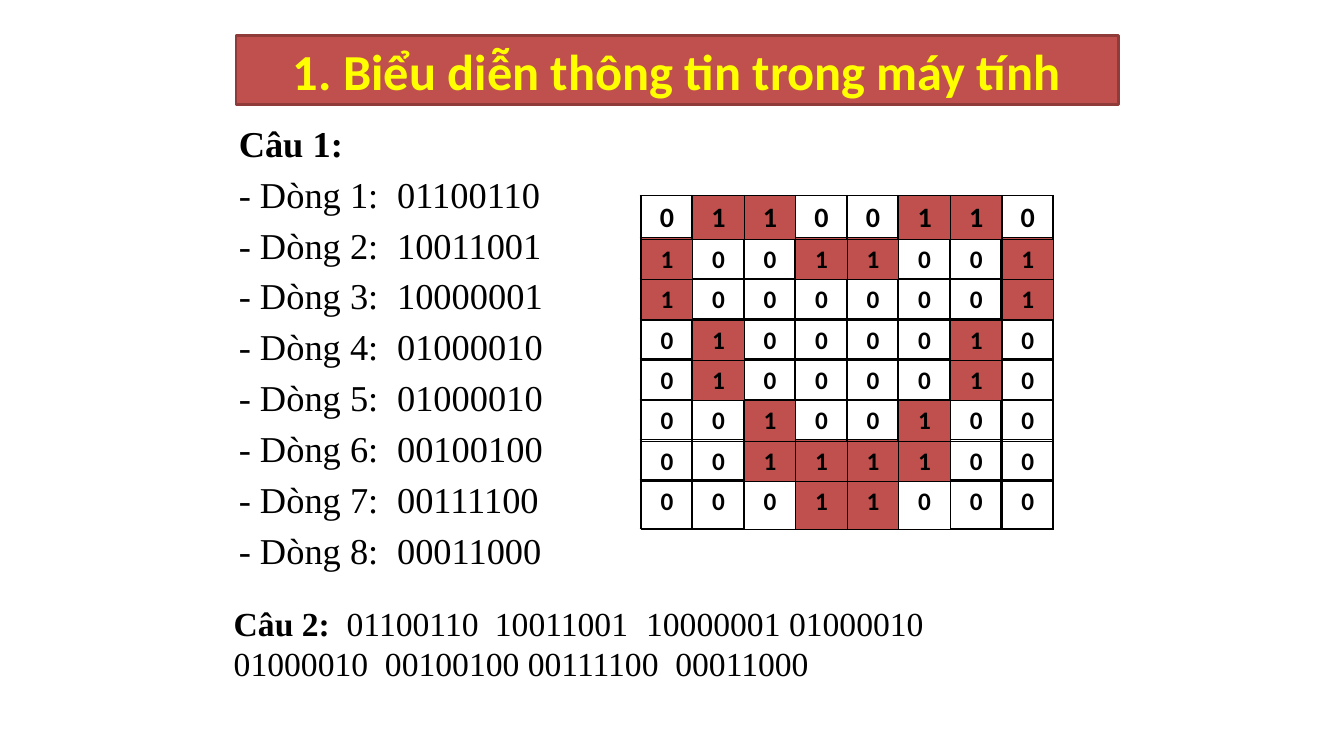
from lxml import etree
from pptx import Presentation
from pptx.dml.color import RGBColor
from pptx.enum.text import MSO_ANCHOR, PP_ALIGN
from pptx.oxml.ns import qn
from pptx.util import Inches, Pt

CENTER, LEFT = PP_ALIGN.CENTER, PP_ALIGN.LEFT
MIDDLE = MSO_ANCHOR.MIDDLE
RED, DARK_RED, YELLOW, BLACK, WHITE = "C0504D", "8E3B39", "FFFF00", "000000", "FFFFFF"
SERIF, SANS = "Times New Roman", "Calibri"
BITMAP_ROWS = ["01100110", "10011001", "10000001", "01000010",
               "01000010", "00100100", "00111100", "00011000"]


def color(value):
    return RGBColor.from_string(value)


def write(paragraph, text, font=SERIF, size=26, bold=False, fill=BLACK, align=LEFT, tabs=()):
    if tabs:
        tab_list = etree.SubElement(paragraph._p.get_or_add_pPr(), qn("a:tabLst"))
        for stop in tabs:
            etree.SubElement(tab_list, qn("a:tab"), pos=str(Inches(stop)), algn="l")
    paragraph.alignment = align
    run = paragraph.add_run()
    run.text = text
    run.font.name = font
    run.font.size = Pt(size)
    run.font.bold = bold
    run.font.color.rgb = color(fill)


presentation = Presentation()
presentation.slide_width = Inches(13.33)
presentation.slide_height = Inches(7.5)
slide = presentation.slides.add_slide(presentation.slide_layouts[5])

# Title banner
title = slide.shapes.title
title.left, title.top = Inches(2.34), Inches(0.35)
title.width, title.height = Inches(8.75), Inches(0.69)
title.fill.solid()
title.fill.fore_color.rgb = color(RED)
title.line.color.rgb = color(DARK_RED)
title.line.width = Pt(2)
title.text_frame.vertical_anchor = MIDDLE
write(title.text_frame.paragraphs[0], "1. Biểu diễn thông tin trong máy tính",
      font=SANS, size=36, bold=True, fill=YELLOW, align=CENTER)

# Question 1: one line of code per bitmap row, codes aligned on a tab stop
answer_box = slide.shapes.add_textbox(Inches(2.27), Inches(1.15), Inches(3.7), Inches(4.96))
answers = answer_box.text_frame
answers.word_wrap = True
write(answers.paragraphs[0], "Câu 1:", bold=True)
for number, bits in enumerate(BITMAP_ROWS, start=1):
    paragraph = answers.add_paragraph()
    paragraph.space_before = Pt(5.2)
    write(paragraph, f"- Dòng {number}:\t{bits}", tabs=[1.57])

# Question 2: all rows in sequence, wider gaps set by tab stops
sequence_box = slide.shapes.add_textbox(Inches(2.22), Inches(5.93), Inches(7.5), Inches(1.02))
sequence_box.text_frame.word_wrap = True
sequence = sequence_box.text_frame.paragraphs[0]
write(sequence, "Câu 2:", size=24, bold=True, tabs=[1.12, 1.5, 2.59, 4.09, 4.38])
gaps = ["\t", "\t", "\t", " ", " ", "\t", " ", "\t"]
write(sequence, "".join(gap + bits for gap, bits in zip(gaps, BITMAP_ROWS)), size=24)

# Heart bitmap: a plain coloured grid under the grid with the digits
count = len(BITMAP_ROWS)
for left, has_digits in ((6.35, False), (6.36, True)):
    frame = slide.shapes.add_table(count, count, Inches(left), Inches(1.94),
                                   Inches(4.09), Inches(3.31))
    table = frame.table
    table.first_row = table.horz_banding = False
    for row, bits in enumerate(BITMAP_ROWS):
        table.rows[row].height = Inches({0: 0.42, count - 1: 0.48}.get(row, 0.39))
        for column, bit in enumerate(bits):
            cell = table.cell(row, column)
            properties = cell._tc.get_or_add_tcPr()
            for side in ("lnL", "lnR", "lnT", "lnB"):
                border = etree.SubElement(properties, qn(f"a:{side}"), w=str(Pt(1)))
                border_fill = etree.SubElement(border, qn("a:solidFill"))
                etree.SubElement(border_fill, qn("a:srgbClr"), val=BLACK)
            if bit == "1":
                cell.fill.solid()
                cell.fill.fore_color.rgb = color(RED)
            elif row == count - 1 and column in (2, 5):
                cell.fill.solid()
                cell.fill.fore_color.rgb = color(WHITE)
            else:
                cell.fill.background()
            if has_digits:
                write(cell.text_frame.paragraphs[0], bit, font=SANS,
                      size=20 if row == 0 else 18, bold=True, align=CENTER)
    frame.height = Inches(3.31)

presentation.save("out.pptx")
